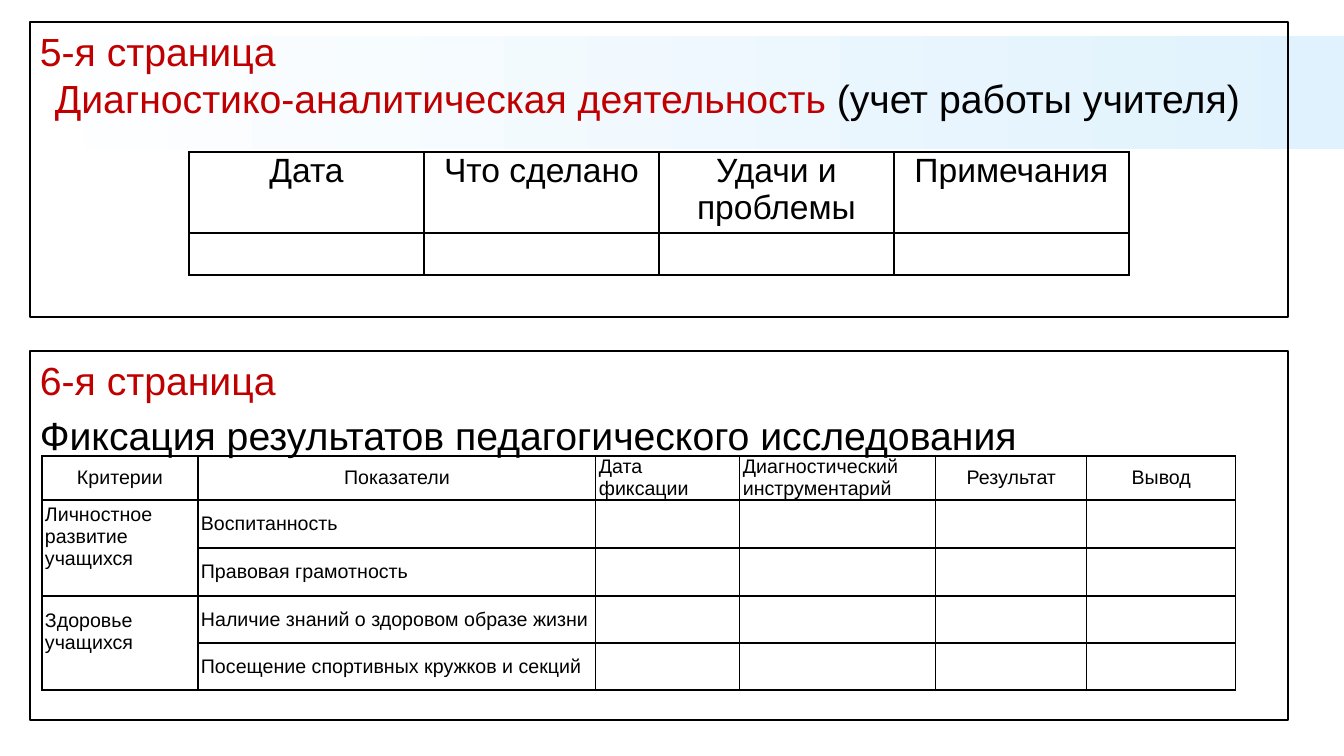
"""Build a slide with two framed planner pages, each holding a table."""
from dataclasses import dataclass

from lxml import etree
from pptx import Presentation
from pptx.dml.color import RGBColor
from pptx.enum.shapes import MSO_SHAPE
from pptx.enum.text import MSO_ANCHOR, PP_ALIGN
from pptx.oxml.ns import qn
from pptx.slide import Slide
from pptx.table import _Cell
from pptx.text.text import TextFrame
from pptx.util import Emu, Pt

RECTANGLE = MSO_SHAPE.RECTANGLE
LEFT, CENTER = PP_ALIGN.LEFT, PP_ALIGN.CENTER
TOP, MIDDLE = MSO_ANCHOR.TOP, MSO_ANCHOR.MIDDLE
EMU_PER_PX = 914400 / 100.8


@dataclass(frozen=True)
class Theme:
    """Colours, font and type sizes in points."""
    font: str = "Arial"
    ink: str = "000000"
    accent: str = "C00000"
    band_start: str = "FFFFFF"
    band_end: str = "E0F2FD"
    heading: float = 28
    large_cell: float = 24
    small_cell: float = 14
    rule: float = 1


@dataclass(frozen=True)
class Span:
    """A run of text in one colour."""
    text: str
    color: str


@dataclass(frozen=True)
class Line:
    """A heading paragraph with its indent in px and space before in points."""
    spans: tuple[Span, ...]
    indent: int = 0
    before: float = 0


@dataclass(frozen=True)
class Frame:
    """An outlined page with heading lines."""
    top: int
    height: int
    lines: tuple[Line, ...]


@dataclass(frozen=True)
class Entry:
    """Text of a table cell, its alignment, rows spanned and bottom inset."""
    text: str
    align: PP_ALIGN = LEFT
    rows: int = 1
    bottom: int = 0


@dataclass(frozen=True)
class Grid:
    """A ruled table with its entries keyed by row and column."""
    left: int
    top: int
    columns: tuple[int, ...]
    rows: tuple[int, ...]
    size: float
    anchor: MSO_ANCHOR
    entries: dict[tuple[int, int], Entry]


THEME = Theme()
FRAMES = (
    Frame(22, 295, (
        Line((Span("5-я страница", THEME.accent),)),
        Line((Span("Диагностико-аналитическая деятельность ", THEME.accent),
              Span("(учет работы учителя)", THEME.ink)), indent=15),
    )),
    Frame(351, 369, (
        Line((Span("6-я страница", THEME.accent),)),
        Line((Span("Фиксация результатов педагогического исследования", THEME.ink),),
             before=5.6),
    )),
)
WORK_HEADERS = ("Дата", "Что сделано", "Удачи и проблемы", "Примечания")
RESULT_HEADERS = (
    Entry("Критерии", CENTER), Entry("Показатели", CENTER), Entry("Дата фиксации"),
    Entry("Диагностический инструментарий"), Entry("Результат", CENTER),
    Entry("Вывод", CENTER),
)
INDICATORS = ("Воспитанность", "Правовая грамотность",
              "Наличие знаний о здоровом образе жизни",
              "Посещение спортивных кружков и секций")
GRIDS = (
    Grid(189, 152, (235,) * 4, (81, 42), THEME.large_cell, TOP,
         {(0, column): Entry(text, CENTER) for column, text in enumerate(WORK_HEADERS)}),
    Grid(42, 456, (156, 398, 144, 196, 151, 149), (44, 48, 48, 47, 47),
         THEME.small_cell, MIDDLE,
         {(0, column): entry for column, entry in enumerate(RESULT_HEADERS)}
         | {(row, 1): Entry(text) for row, text in enumerate(INDICATORS, 1)}
         | {(1, 0): Entry("Личностное развитие учащихся", rows=2, bottom=22),
            (3, 0): Entry("Здоровье учащихся", rows=2, bottom=22)}),
)


def px(value: int) -> Emu:
    """Turn px into EMU."""
    return Emu(round(value * EMU_PER_PX))


def rgb(color: str) -> RGBColor:
    """Turn a hex string into a colour."""
    return RGBColor.from_string(color)


def add_line(text: TextFrame, index: int, line: Line) -> None:
    """Write one heading paragraph."""
    para = text.paragraphs[0] if index == 0 else text.add_paragraph()
    para.alignment = LEFT
    if line.before:
        para.space_before = Pt(line.before)
    if line.indent:
        para._p.get_or_add_pPr().set("indent", str(px(line.indent)))
    for span in line.spans:
        add_span(para, span, THEME.heading)


def add_span(para, span: Span, size: float) -> None:
    """Add one styled run to a paragraph."""
    run = para.add_run()
    run.text = span.text
    run.font.name = THEME.font
    run.font.size = Pt(size)
    run.font.color.rgb = rgb(span.color)


def draw_band(page: Slide) -> None:
    """Draw the pale gradient band behind the first page."""
    band = page.shapes.add_shape(RECTANGLE, 0, px(36), px(1344), px(113))
    band.shadow.inherit = False
    band.line.fill.background()
    band.fill.gradient()
    band.fill.gradient_angle = 0
    for stop, color in zip(band.fill.gradient_stops, (THEME.band_start, THEME.band_end)):
        stop.color.rgb = rgb(color)


def draw_frame(page: Slide, frame: Frame) -> None:
    """Draw an outlined page with its headings."""
    box = page.shapes.add_shape(RECTANGLE, px(30), px(frame.top), px(1258), px(frame.height))
    box.shadow.inherit = False
    box.fill.background()
    box.line.color.rgb = rgb(THEME.ink)
    box.line.width = Pt(THEME.rule)
    box.text_frame.word_wrap = True
    box.text_frame.vertical_anchor = TOP
    for index, line in enumerate(frame.lines):
        add_line(box.text_frame, index, line)


def rule_cell(cell: _Cell) -> None:
    """Give a cell four thin borders and no fill."""
    properties = cell._tc.get_or_add_tcPr()
    for side in ("a:lnL", "a:lnR", "a:lnT", "a:lnB"):
        border = etree.SubElement(properties, qn(side), w=str(Pt(THEME.rule)))
        fill = etree.SubElement(border, qn("a:solidFill"))
        etree.SubElement(fill, qn("a:srgbClr"), val=THEME.ink)
    cell.fill.background()


def draw_grid(page: Slide, grid: Grid) -> None:
    """Draw a ruled table and fill in its entries."""
    table = page.shapes.add_table(
        len(grid.rows), len(grid.columns), px(grid.left), px(grid.top),
        px(sum(grid.columns)), px(sum(grid.rows))).table
    table.first_row = table.horz_banding = False
    for column, width in zip(table.columns, grid.columns):
        column.width = px(width)
    for row, height in zip(table.rows, grid.rows):
        row.height = px(height)
    for cell in table.iter_cells():
        rule_cell(cell)
        cell.margin_left = cell.margin_right = px(3)
        cell.margin_top = cell.margin_bottom = 0
        cell.vertical_anchor = grid.anchor
        cell.text_frame.paragraphs[0].font.size = Pt(grid.size)
    for (row, column), entry in grid.entries.items():
        cell = table.cell(row, column)
        cell.margin_bottom = px(entry.bottom)
        if entry.rows > 1:
            cell.merge(table.cell(row + entry.rows - 1, column))
        para = cell.text_frame.paragraphs[0]
        para.alignment = entry.align
        add_span(para, Span(entry.text, THEME.ink), grid.size)


def main() -> None:
    """Build and save the deck."""
    deck = Presentation()
    deck.slide_width, deck.slide_height = px(1344), px(756)
    page = deck.slides.add_slide(deck.slide_layouts[6])
    draw_band(page)
    for frame, grid in zip(FRAMES, GRIDS):
        draw_frame(page, frame)
        draw_grid(page, grid)
    deck.save("out.pptx")


if __name__ == "__main__":
    main()
